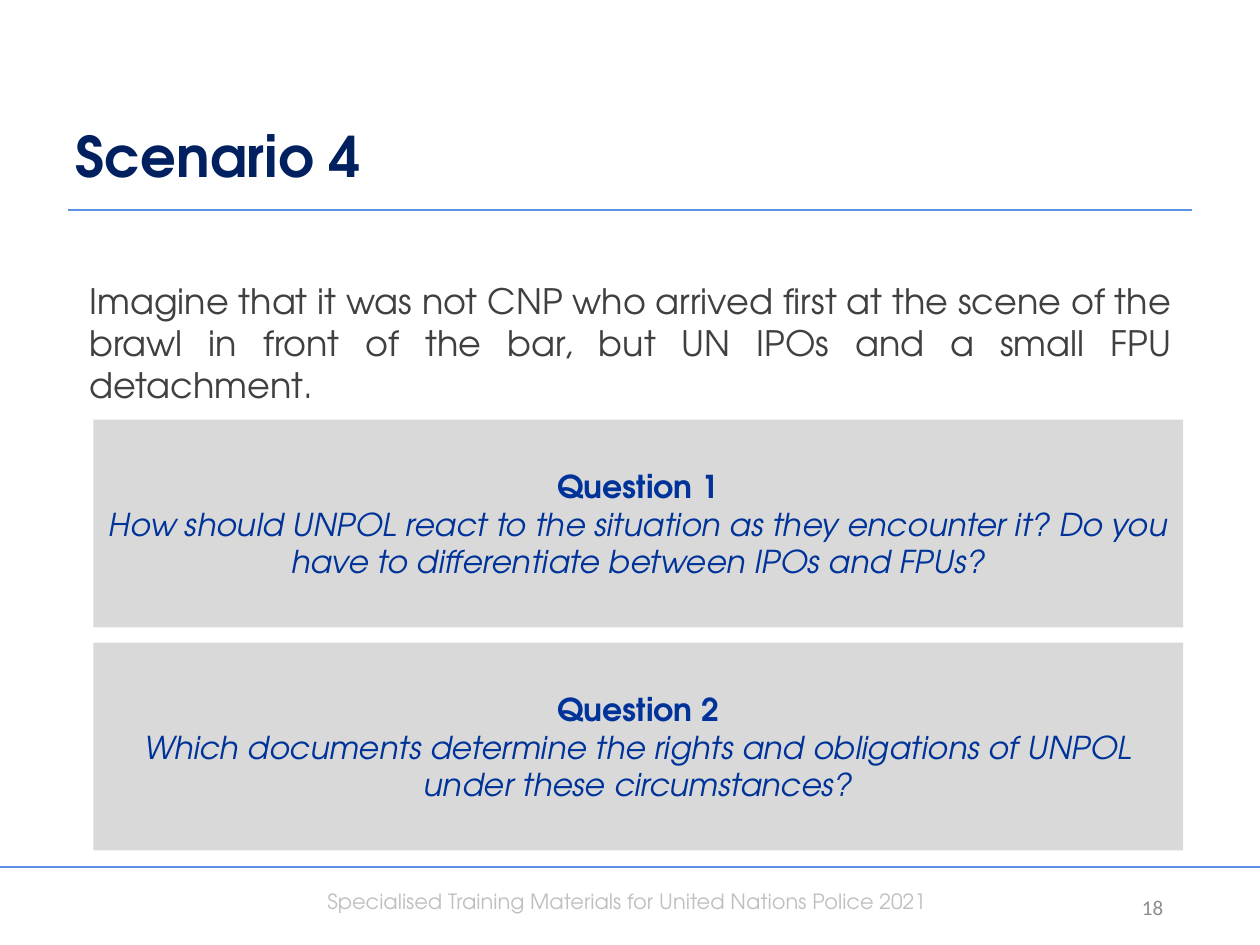
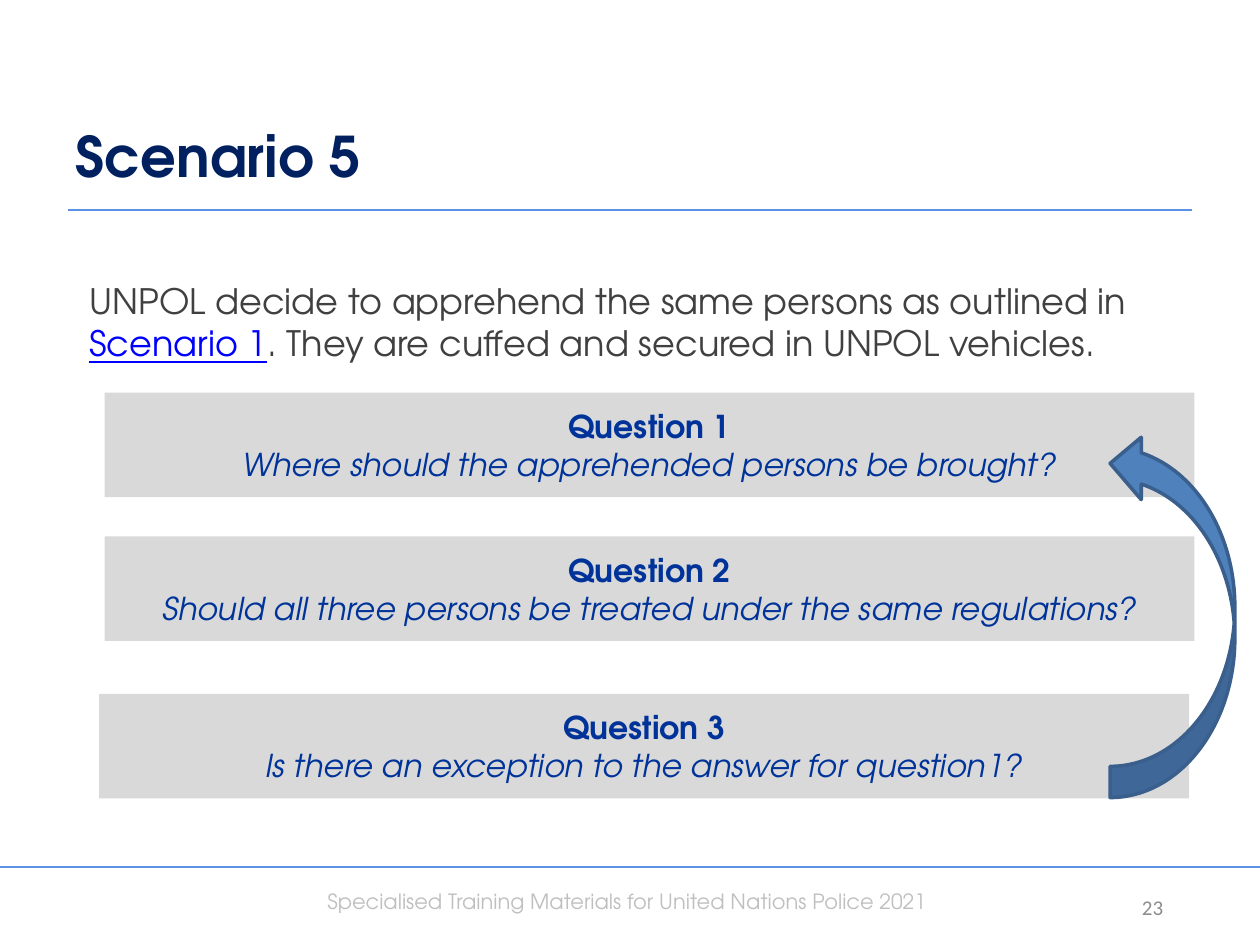
from dataclasses import dataclass

from lxml import etree
from pptx import Presentation
from pptx.dml.color import RGBColor
from pptx.enum.shapes import MSO_CONNECTOR as Connector, MSO_SHAPE as Preset
from pptx.enum.text import MSO_ANCHOR as Anchor, MSO_AUTO_SIZE as AutoSize, PP_ALIGN as Align
from pptx.oxml.ns import qn
from pptx.util import Pt

FONT = "TeX Gyre Adventor"
NUMBER_FONT = "Calibri"
NAVY, BLUE, RULE = "002060", "003399", "5B92E5"
TEXT, PANEL, LINK = "404040", "D9D9D9", "0000FF"
FOOTER_GREY, NUMBER_GREY = "BFBFBF", "8C8C8C"
ARROW_FILL, ARROW_LINE = "4F81BD", "3A5F8C"
FOOTER = "Specialised Training Materials for United Nations Police 2021"
PANEL_WIDTH = 622.8


@dataclass
class Span:
    text: str
    size: float = 20
    color: str = TEXT
    bold: bool = False
    italic: bool = False
    underline: bool = False
    font: str = FONT


@dataclass
class Question:
    number: int
    text: str
    left: float
    top: float
    height: float


@dataclass
class Scenario:
    title: str
    page_number: int
    intro: list[Span]
    intro_align: Align
    questions: list[Question]


def rgb(color: str) -> RGBColor:
    return RGBColor.from_string(color)


def add_span(para, span: Span) -> None:
    run = para.add_run()
    run.text = span.text
    font = run.font
    font.name, font.size = span.font, Pt(span.size)
    font.bold, font.italic, font.underline = span.bold, span.italic, span.underline
    font.color.rgb = rgb(span.color)


def place(shape, left: float, top: float, width: float, height: float) -> None:
    shape.left, shape.top = Pt(left), Pt(top)
    shape.width, shape.height = Pt(width), Pt(height)


def add_rule(page, left: float, right: float, top: float) -> None:
    rule = page.shapes.add_connector(Connector.STRAIGHT, Pt(left), Pt(top), Pt(right), Pt(top))
    rule.line.color.rgb = rgb(RULE)
    rule.line.width = Pt(0.75)
    etree.SubElement(rule._element.spPr, qn("a:effectLst"))


def add_label(page, left: float, top: float, width: float, height: float,
              span: Span, align: Align, anchor: Anchor) -> None:
    box = page.shapes.add_textbox(Pt(left), Pt(top), Pt(width), Pt(height))
    frame = box.text_frame
    frame.word_wrap = True
    frame.vertical_anchor = anchor
    para = frame.paragraphs[0]
    para.alignment = align
    add_span(para, span)


def add_frame(page, page_number: int) -> None:
    """Rules, footer and page number shared by all slides."""
    add_rule(page, 0, 720, 495.36)
    add_rule(page, 38.88, 681.12, 120)
    add_label(page, 180, 504, 360, 21.6, Span(FOOTER, 12, FOOTER_GREY), Align.LEFT, Anchor.TOP)
    number = Span(str(page_number), 12, NUMBER_GREY, font=NUMBER_FONT)
    add_label(page, 581.76, 504, 90, 28.8, number, Align.RIGHT, Anchor.MIDDLE)


def fill_title(page, text: str) -> None:
    title = page.shapes.title
    place(title, 36, 36, 563.76, 75.6)
    frame = title.text_frame
    frame.auto_size = AutoSize.NONE
    frame.vertical_anchor = Anchor.BOTTOM
    para = frame.paragraphs[0]
    para.alignment = Align.LEFT
    para.line_spacing = Pt(34.4)
    add_span(para, Span(text, 32, NAVY, bold=True))


def fill_intro(page, spans: list[Span], align: Align) -> None:
    body = page.placeholders[1]
    place(body, 43.92, 156.24, 632.88, 311.76)
    frame = body.text_frame
    frame.auto_size = AutoSize.NONE
    para = frame.paragraphs[0]
    # Plain paragraph: no bullet, no hanging indent
    props = para._p.get_or_add_pPr()
    props.set("marL", "0")
    props.set("indent", "0")
    etree.SubElement(props, qn("a:buNone"))
    para.alignment = align
    para.space_before = Pt(0)
    for span in spans:
        add_span(para, span)


def add_question(page, question: Question) -> None:
    panel = page.shapes.add_shape(Preset.RECTANGLE, Pt(question.left), Pt(question.top),
                                  Pt(PANEL_WIDTH), Pt(question.height))
    panel.shadow.inherit = False
    panel.fill.solid()
    panel.fill.fore_color.rgb = rgb(PANEL)
    panel.line.fill.background()
    frame = panel.text_frame
    frame.word_wrap = True
    frame.vertical_anchor = Anchor.MIDDLE
    heading, wording = frame.paragraphs[0], frame.add_paragraph()
    heading.alignment = wording.alignment = Align.CENTER
    add_span(heading, Span(f"Question {question.number}", 18, BLUE, bold=True))
    add_span(wording, Span(question.text, 18, BLUE, italic=True))


def add_return_arrow(page) -> None:
    """Curved arrow leading from the last question back to the first."""
    arrow = page.shapes.add_shape(Preset.CURVED_LEFT_ARROW, Pt(634.32), Pt(246.96),
                                  Pt(71.28), Pt(208.8))
    arrow.shadow.inherit = False
    arrow.rotation = 180
    arrow._element.spPr.find(qn("a:xfrm")).set("flipH", "1")
    arrow.fill.solid()
    arrow.fill.fore_color.rgb = rgb(ARROW_FILL)
    arrow.line.color.rgb = rgb(ARROW_LINE)
    arrow.line.width = Pt(2)


def add_scenario(deck, scenario: Scenario):
    page = deck.slides.add_slide(deck.slide_layouts[1])
    fill_title(page, scenario.title)
    fill_intro(page, scenario.intro, scenario.intro_align)
    add_frame(page, scenario.page_number)
    for question in scenario.questions:
        add_question(page, question)
    return page


SCENARIO_4 = Scenario(
    "Scenario 4", 18,
    [Span("Imagine that it was not CNP who arrived first at the scene of the brawl "
          "in front of the bar, but UN IPOs and a small FPU detachment.")],
    Align.JUSTIFY,
    [Question(1, "How should UNPOL react to the situation as they encounter it? "
                 "Do you have to differentiate between IPOs and FPUs?", 53.28, 239.76, 118.8),
     Question(2, "Which documents determine the rights and obligations of UNPOL "
                 "under these circumstances?", 53.28, 367.2, 118.8)])

SCENARIO_5 = Scenario(
    "Scenario 5", 23,
    [Span("UNPOL decide to apprehend the same persons as outlined in "),
     Span("Scenario 1", color=LINK, underline=True),
     Span(". They are cuffed and secured in UNPOL vehicles.")],
    Align.LEFT,
    [Question(1, "Where should the apprehended persons be brought?", 59.76, 224.4, 59.76),
     Question(2, "Should all three persons be treated under the same regulations?",
              59.76, 306.5, 59.76),
     Question(3, "Is there an exception to the answer for question1?", 56.7, 396.5, 59.76)])


def main() -> None:
    deck = Presentation()
    deck.slide_width, deck.slide_height = Pt(720), Pt(540)
    add_scenario(deck, SCENARIO_4)
    add_return_arrow(add_scenario(deck, SCENARIO_5))
    deck.save("out.pptx")


if __name__ == "__main__":
    main()
